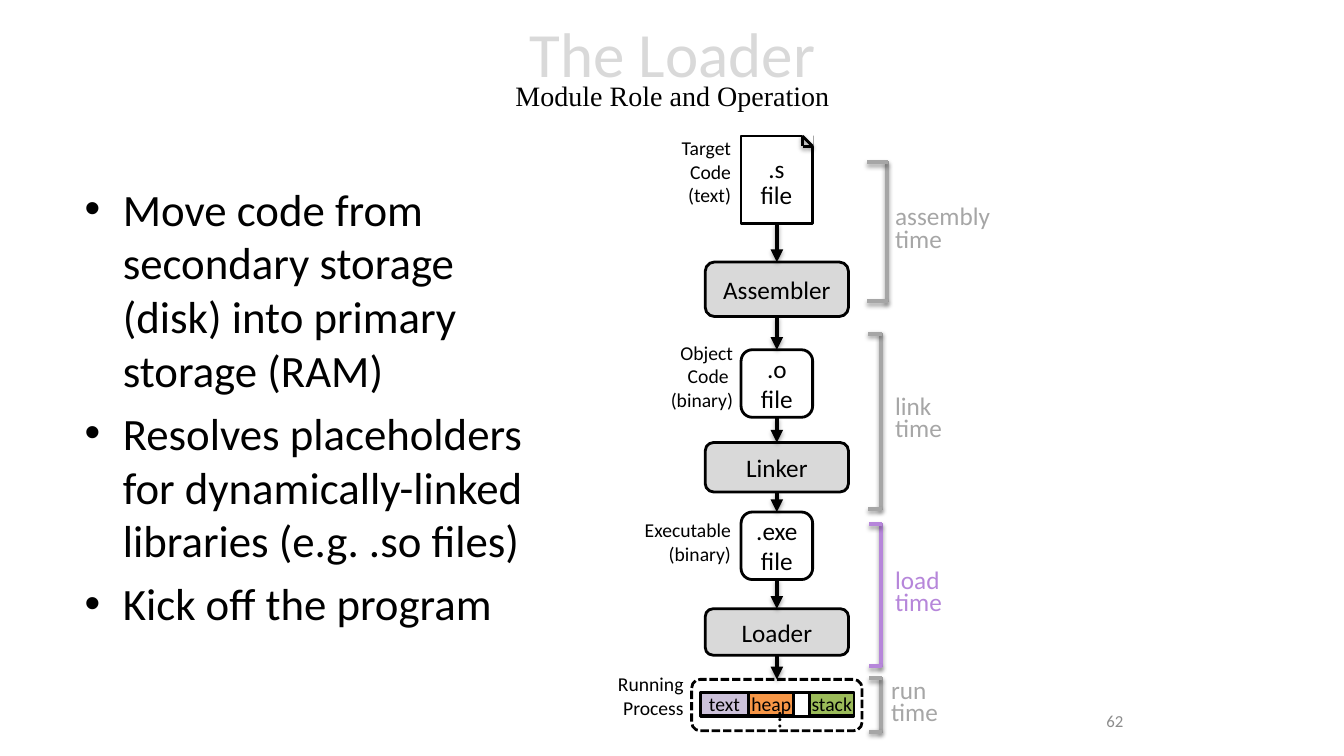
from itertools import pairwise

from lxml.etree import SubElement
from pptx import Presentation
from pptx.dml.color import RGBColor
from pptx.enum.dml import MSO_LINE
from pptx.enum.shapes import MSO_CONNECTOR, MSO_SHAPE as SHAPE
from pptx.enum.text import MSO_ANCHOR as ANCHOR, MSO_AUTO_SIZE as AUTO, PP_ALIGN as ALIGN
from pptx.oxml.ns import qn
from pptx.util import Inches, Pt

BLACK, WHITE, GRAY, MUTED, PURPLE = "000000", "FFFFFF", "D9D9D9", "A6A6A6", "B686DA"


def rgb(color):
    return RGBColor.from_string(color)


def add_run(paragraph, text, size, color=BLACK, font="Calibri"):
    run = paragraph.add_run()
    run.text = text
    run.font.size = Pt(size)
    run.font.name = font
    run.font.color.rgb = rgb(color)


def write_lines(frame, lines, size, color=BLACK, align=ALIGN.CENTER, spacing=None):
    for i, line in enumerate(lines):
        paragraph = frame.add_paragraph() if i else frame.paragraphs[0]
        paragraph.alignment = align
        if spacing:
            paragraph.line_spacing = spacing
        add_run(paragraph, line, size, color)


def add_text_box(slide, box, anchor=ANCHOR.TOP):
    text_box = slide.shapes.add_textbox(*map(Inches, box))
    text_box.text_frame.word_wrap = True
    text_box.text_frame.vertical_anchor = anchor
    return text_box


def add_label(slide, box, lines, size, **style):
    label = add_text_box(slide, box)
    label.text_frame.word_wrap = False
    label.text_frame.auto_size = AUTO.SHAPE_TO_FIT_TEXT
    write_lines(label.text_frame, lines, size, **style)
    return label


def add_box(slide, kind, box, fill, lines=(), size=18):
    shape = slide.shapes.add_shape(kind, *map(Inches, box))
    shape.shadow.inherit = False
    shape.fill.solid()
    shape.fill.fore_color.rgb = rgb(fill)
    shape.line.color.rgb = rgb(BLACK)
    shape.line.width = Pt(2)
    write_lines(shape.text_frame, lines, size)
    return shape


def add_line(slide, start, end, color=BLACK, width=3):
    line = slide.shapes.add_connector(MSO_CONNECTOR.STRAIGHT, *map(Inches, (*start, *end)))
    line.line.color.rgb = rgb(color)
    line.line.width = Pt(width)
    # Soft shadow falling straight down
    effects = SubElement(line._element.spPr, qn("a:effectLst"))
    shadow = SubElement(effects, qn("a:outerShdw"), blurRad=str(Pt(3.1)),
                        dist=str(Pt(1.8)), dir="5400000", rotWithShape="0")
    shade = SubElement(shadow, qn("a:srgbClr"), val=BLACK)
    SubElement(shade, qn("a:alpha"), val="35000")
    return line


def add_arrow(slide, source, target):
    arrow = add_line(slide, (0, 0), (1, 1))
    arrow.begin_connect(source, 2)
    arrow.end_connect(target, 0)
    SubElement(arrow.line._get_or_add_ln(), qn("a:tailEnd"), type="triangle")


def add_heading(slide, box):
    heading = add_text_box(slide, box, ANCHOR.MIDDLE).text_frame.paragraphs[0]
    heading.alignment = ALIGN.CENTER
    heading.line_spacing = 0.7
    add_run(heading, "The Loader", 45, GRAY)
    heading.add_line_break()
    add_run(heading, "Module Role and Operation", 20, font="Times New Roman")


def add_roles(slide, box):
    frame = add_text_box(slide, box).text_frame
    write_lines(frame, [
        "Move code from secondary storage (disk) into primary storage (RAM)",
        "Resolves placeholders for dynamically-linked libraries (e.g. .so files)",
        "Kick off the program",
    ], 32, align=ALIGN.LEFT)
    for role in frame.paragraphs:
        role.space_before = Pt(6.4)
        properties = role._p.get_or_add_pPr()
        properties.set("marL", str(Inches(0.38)))
        properties.set("indent", str(Inches(-0.38)))
        SubElement(properties, qn("a:buFont"), typeface="Arial")
        SubElement(properties, qn("a:buChar"), char="•")


def add_source_file(slide, box):
    left, top, width, height = box
    right, fold = left + width, 0.1
    page = add_box(slide, SHAPE.RECTANGLE, box, WHITE)
    # Folded corner at top right
    corner = add_box(slide, SHAPE.RECTANGLE, (right - fold, top - 0.01, fold + 0.01, fold + 0.01), WHITE)
    corner.line.fill.background()
    inner, outer = (right - fold, top), (right, top + fold)
    bend = (right - fold, top + fold)
    for start, end in ((inner, bend), (outer, bend), (inner, outer)):
        add_line(slide, start, end, width=2)
    add_label(slide, (left + 0.09, top + 0.16, 0.52, 0.63), [".s", "file"], 18, spacing=Pt(18.6))
    return page


def add_process(slide, box):
    left, top, width, height = box
    process = add_box(slide, SHAPE.ROUNDED_RECTANGLE, box, WHITE)
    process.line.dash_style = MSO_LINE.SQUARE_DOT
    # Memory segments, with free space between heap and stack
    memory_top = top + 0.13
    add_box(slide, SHAPE.RECTANGLE, (left + 0.09, memory_top, 1.52, 0.24), WHITE)
    for segment, offset, size, fill in (("stack", 1.17, 0.44, "9BBB59"),
                                        ("text", 0.09, 0.47, "CCC1DA"),
                                        ("heap", 0.57, 0.44, "F79646")):
        memory = add_box(slide, SHAPE.RECTANGLE, (left + offset, memory_top, size, 0.23),
                         fill, [segment], 14)
        memory.text_frame.margin_left = memory.text_frame.margin_right = 0
    dots = add_label(slide, (left + 0.77, top + 0.21, 0.38, 0.4), ["…"], 18, align=ALIGN.LEFT)
    dots.rotation = 90
    return process


def add_pipeline(slide, box):
    left, top, width, height = box
    center = left + width / 2

    def place(offset, node_width, node_height):
        return center - node_width / 2, top + offset, node_width, node_height

    # Files and tools, from source to running process
    nodes = [add_source_file(slide, place(0, 0.71, 0.87))]
    for lines, offset, node_width, node_height, fill in (
            (["Assembler"], 1.25, 1.42, 0.54, GRAY),
            ([".o", "file"], 2.12, 0.71, 0.67, WHITE),
            (["Linker"], 3.04, 1.42, 0.49, GRAY),
            ([".exe", "file"], 3.73, 0.71, 0.67, WHITE),
            (["Loader"], 4.69, 1.42, 0.46, GRAY)):
        nodes.append(add_box(slide, SHAPE.ROUNDED_RECTANGLE,
                             place(offset, node_width, node_height), fill, lines))
    nodes.append(add_process(slide, place(5.39, 1.69, 0.51)))
    for source, target in pairwise(nodes):
        add_arrow(slide, source, target)

    # Descriptions, flush right against their files
    for lines, right, offset, label_width in (
            (["Target", "Code", "(text)"], 7.35, -0.05, 0.7),
            (["Object", "Code ", "(binary)"], 7.37, 1.98, 0.83),
            (["Executable", "(binary)"], 7.35, 3.74, 1.07),
            (["Running", "Process"], 6.88, 5.27, 0.86)):
        label_height = 0.1 + 0.235 * len(lines)
        add_label(slide, (right - label_width, top + offset, label_width, label_height),
                  lines, 14, align=ALIGN.RIGHT)


def add_phase(slide, box, phase, label_left, label_width, color=MUTED):
    left, top, width, height = box
    right, bottom = left + width, top + height
    add_line(slide, (right, top), (right, bottom), color)
    for y in (top + 0.01, bottom - 0.01):
        add_line(slide, (right + 0.01, y), (left, y), color)
    add_label(slide, (label_left, top + height / 2 - 0.28, label_width, 0.56),
              [phase, "time"], 18, color=color, align=ALIGN.LEFT, spacing=Pt(16))


def add_page_number(slide, box):
    frame = add_text_box(slide, box, ANCHOR.MIDDLE).text_frame
    write_lines(frame, ["62"], 12, "8C8C8C", ALIGN.RIGHT)


def main():
    deck = Presentation()
    deck.slide_width, deck.slide_height = Inches(13.33), Inches(7.5)
    slide = deck.slides.add_slide(deck.slide_layouts[6])
    add_roles(slide, (0.74, 1.75, 4.83, 4.95))
    add_page_number(slide, (8.13, 6.95, 3.11, 0.4))
    add_heading(slide, (1.67, 0, 10, 1.45))
    add_pipeline(slide, (6.86, 1.35, 1.69, 5.9))
    add_phase(slide, (8.6, 1.6, 0.2, 1.4), "assembly", 8.78, 1.21)
    add_phase(slide, (8.61, 3.3, 0.13, 1.76), "link", 8.78, 0.67)
    add_phase(slide, (8.62, 5.19, 0.12, 1.43), "load", 8.78, 0.71, PURPLE)
    add_phase(slide, (8.62, 6.72, 0.12, 0.55), "run", 8.74, 0.67)
    deck.save("out.pptx")


if __name__ == "__main__":
    main()
